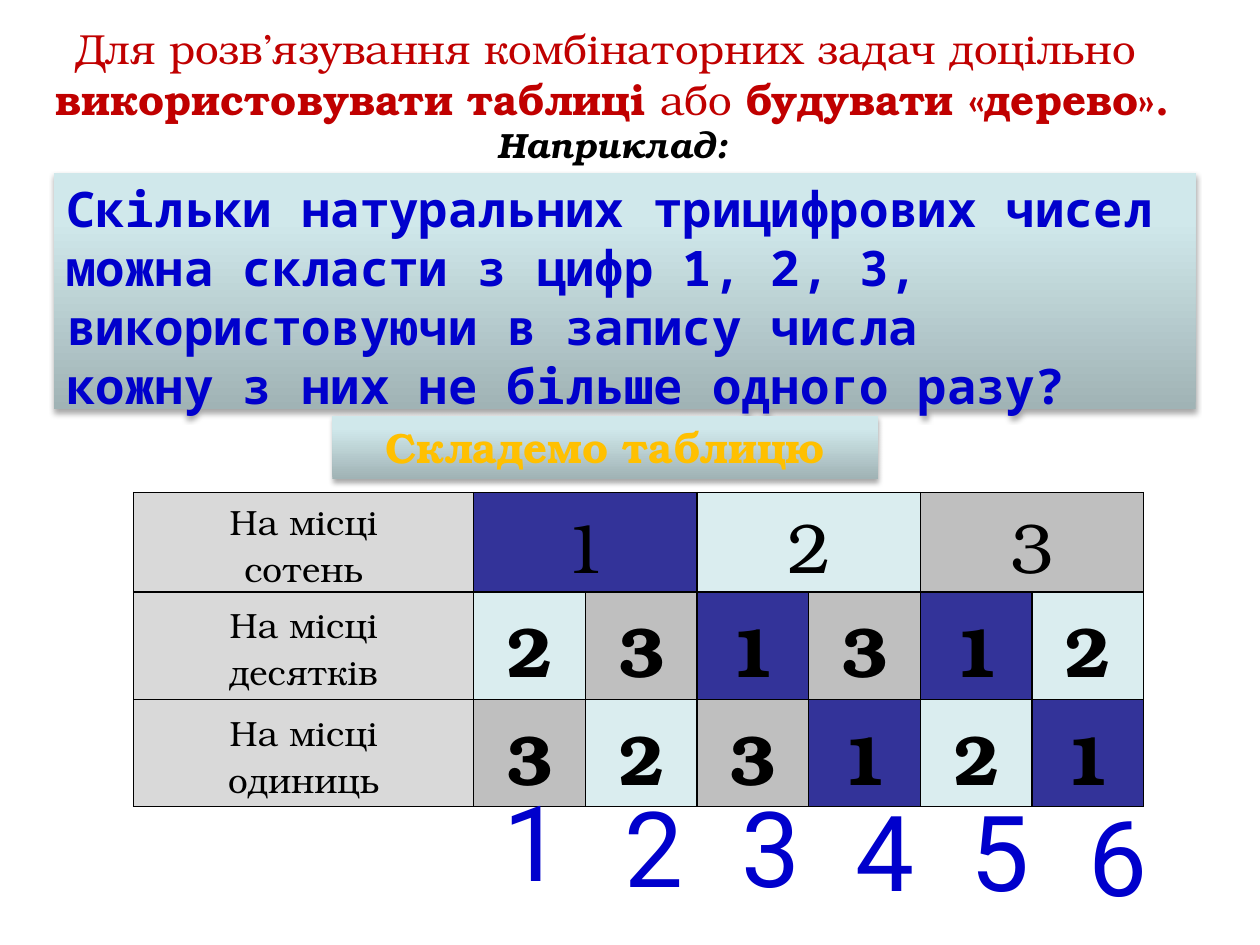
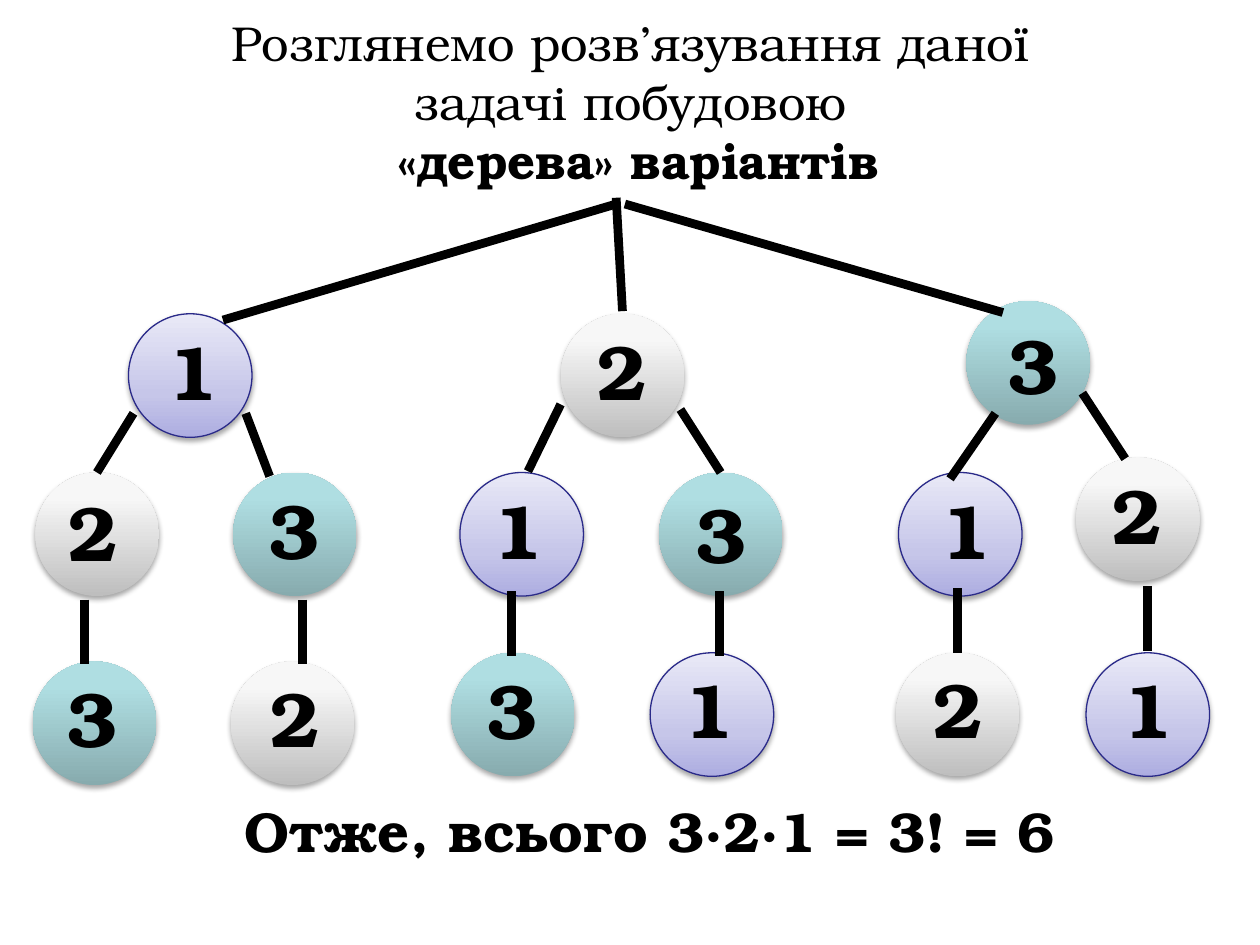
from copy import deepcopy
from pptx import Presentation
from pptx.dml.color import RGBColor
from pptx.enum import shapes as kinds, text as t
from pptx.oxml import ns, parse_xml
from pptx.util import Pt

BLACK = RGBColor(0x00, 0x00, 0x00)
RED = RGBColor(0xC0, 0x00, 0x00)
BLUE = RGBColor(0x00, 0x00, 0xCC)
GOLD = RGBColor(0xFF, 0xC0, 0x00)
NAVY = RGBColor(0x2A, 0x2A, 0x89)
HEAD = RGBColor(0xD9, 0xD9, 0xD9)
CELLS = {
    "1": RGBColor(0x33, 0x33, 0x99),
    "2": RGBColor(0xDA, 0xED, 0xEF),
    "3": RGBColor(0xBF, 0xBF, 0xBF),
}
PANEL = ((0, RGBColor(0xA0, 0xB3, 0xB5)), (0.8, RGBColor(0xD0, 0xE8, 0xEB)),
         (1, RGBColor(0xD1, 0xEA, 0xEC)))
BALLS = {
    "1": ((0, RGBColor(0xAD, 0xAD, 0xE1)), (0.35, RGBColor(0xC6, 0xC6, 0xE9)),
          (1, RGBColor(0xE9, 0xE9, 0xF7))),
    "2": ((0, RGBColor(0xBE, 0xBE, 0xBE)), (0.8, RGBColor(0xF7, 0xF7, 0xF7)),
          (1, RGBColor(0xF8, 0xF8, 0xF8))),
    "3": ((0, RGBColor(0x87, 0xAB, 0xAE)), (0.8, RGBColor(0xAF, 0xDE, 0xE2)),
          (1, RGBColor(0xAF, 0xE0, 0xE4))),
}
SERIF, MONO, SANS = "TeX Gyre Bonum", "Noto Sans Mono", "Roboto"
LEFT, MID = t.PP_ALIGN.LEFT, t.PP_ALIGN.CENTER
RECT, OVAL = kinds.MSO_SHAPE.RECTANGLE, kinds.MSO_SHAPE.OVAL
BALL = 70.6

MARKS = ((280.8, 439.9), (349.9, 443.5), (416.9, 443.5),
         (481.7, 445.7), (547.2, 445.7), (614.9, 448.6))
NODES = (
    ("2", 20.2, 270, 30.2, 273.6), ("3", 18.7, 378, 29.5, 379.4),
    ("3", 133.2, 270, 144.7, 272.2), ("2", 131.8, 378, 145.4, 379.4),
    ("1", 262.8, 270, 272.9, 272.2), ("3", 257.8, 373, 269.3, 375.1),
    ("3", 376.6, 270, 388.8, 274.3), ("1", 371.5, 373, 382.3, 374.4),
    ("1", 513.4, 270, 529.2, 272.2), ("2", 511.9, 373, 524.2, 374.4),
    ("2", 614.9, 261.4, 626.4, 263.5), ("1", 620.6, 373, 632.9, 374.4),
    ("1", 73.4, 179.3, 87.1, 181.4), ("2", 320.4, 179.3, 332.6, 181.4),
    ("3", 552.2, 172.1, 567.4, 177.8),
)
EDGES = (
    (76.3, 236.2, 55.4, 270), (140.4, 236.2, 154.1, 272.2),
    (320.4, 231.1, 301.7, 269.3), (388.8, 234, 411.8, 270),
    (568.8, 236.2, 542.9, 273.6), (618.5, 224.6, 643, 262.1),
    (352.1, 116.6, 127.4, 182.9), (357.1, 116.6, 573.1, 178.6),
    (352.1, 113, 355.7, 177.8),
)
STEMS = ((48.2, 342.7), (172.8, 342.7), (292.3, 337.9),
         (411.1, 337.9), (547.2, 336.2), (655.9, 334.8))


class Deck:
    def __init__(self):
        self.prs = Presentation()
        self.prs.slide_width, self.prs.slide_height = Pt(720), Pt(540)

    def page(self):
        self.slide = self.prs.slides.add_slide(self.prs.slide_layouts[5])

    def put(self, frame, words, size, color=BLACK, font=SERIF, bold=False, align=MID):
        frame.word_wrap = True
        for n, line in enumerate(words.split("\n")):
            para = frame.add_paragraph() if n else frame.paragraphs[0]
            para.alignment = align
            for i, part in enumerate(line.split("*")):
                for j, bit in enumerate(part.split("\v")):
                    if j:
                        para.add_line_break()
                    if bit:
                        run = para.add_run()
                        run.text = bit
                        run.font.name, run.font.size = font, Pt(size)
                        run.font.bold = bold or i % 2 == 1
                        run.font.color.rgb = color

    def title(self, box, words, size, color=BLACK):
        head = self.slide.shapes.title
        head.left, head.top, head.width, head.height = map(Pt, box)
        frame = head.text_frame
        frame.auto_size = t.MSO_AUTO_SIZE.NONE
        frame.vertical_anchor = t.MSO_ANCHOR.TOP
        self.put(frame, words, size, color)
        return frame

    def label(self, box, words, size, **look):
        item = self.slide.shapes.add_textbox(*map(Pt, box))
        self.put(item.text_frame, words, size, **look)

    def shape(self, kind, box, stops, edge=None):
        item = self.slide.shapes.add_shape(kind, *map(Pt, box))
        item.fill.gradient()
        item.fill.gradient_angle = 90
        group = item.element.spPr.find(".//" + ns.qn("a:gsLst"))
        group.append(deepcopy(group[0]))
        for stop, (spot, color) in zip(item.fill.gradient_stops, stops):
            stop.position, stop.color.rgb = spot, color
        if edge:
            item.line.color.rgb, item.line.width = edge, Pt(0.75)
        else:
            item.line.fill.background()
        item.shadow.inherit = False
        item.element.spPr.find(ns.qn("a:effectLst")).append(parse_xml(
            f'<a:outerShdw {ns.nsdecls("a")} blurRad="{Pt(3.1)}" dist="{Pt(1.8)}" dir="5400000" '
            'rotWithShape="0"><a:srgbClr val="000000"><a:alpha val="35000"/></a:srgbClr>'
            '</a:outerShdw>'))
        item.text_frame.vertical_anchor = t.MSO_ANCHOR.TOP
        return item.text_frame

    def line(self, *ends):
        item = self.slide.shapes.add_connector(kinds.MSO_CONNECTOR.STRAIGHT, *map(Pt, ends))
        item.line.color.rgb, item.line.width = BLACK, Pt(5)
        item.element.spPr.append(parse_xml(f'<a:effectLst {ns.nsdecls("a")}/>'))

    def cell(self, cell, color):
        cell.fill.solid()
        cell.fill.fore_color.rgb = color
        cell.vertical_anchor = t.MSO_ANCHOR.MIDDLE
        cell.margin_top, cell.margin_bottom = Pt(3), 0
        for n, side in enumerate("LRTB"):
            cell._tc.get_or_add_tcPr().insert(n, parse_xml(
                f'<a:ln{side} {ns.nsdecls("a")} w="{Pt(1)}"><a:solidFill>'
                f'<a:srgbClr val="{BLACK}"/></a:solidFill></a:ln{side}>'))

    def table(self, box, wide, rows):
        grid = self.slide.shapes.add_table(len(rows), 7, *map(Pt, box)).table
        grid.first_row = grid.horz_banding = False
        for n, col in enumerate(grid.columns):
            col.width = Pt((box[2] - wide) / 6 if n else wide)
        for r, (name, digits) in enumerate(rows):
            self.cell(grid.cell(r, 0), HEAD)
            self.put(grid.cell(r, 0).text_frame, "На місці\n" + name, 20)
            span = 6 // len(digits)
            for c in range(6):
                self.cell(grid.cell(r, c + 1), CELLS[digits[c // span]])
            for n, digit in enumerate(digits):
                first = grid.cell(r, 1 + n * span)
                if span > 1:
                    first.merge(grid.cell(r, (n + 1) * span))
                self.put(first.text_frame, digit, 40, bold=r > 0)


def chart(deck):
    deck.page()
    head = deck.title((0, 9.4, 700, 90),
                      "Для розв’язування комбінаторних задач доцільно \n"
                      "*використовувати таблиці *або *будувати «дерево».*\n*Наприклад:*", 24, RED)
    font = head.paragraphs[2].runs[0].font
    font.size, font.italic, font.color.rgb = Pt(20), True, BLACK
    task = deck.shape(RECT, (31, 98.6, 652.3, 135.4), PANEL)
    deck.put(task, "Скільки натуральних трицифрових чисел \vможна скласти з цифр 1, 2, 3, \v"
             "використовуючи в запису числа \vкожну з них не більше одного разу?",
             28, BLUE, MONO, True, LEFT)
    deck.table((76.3, 281.5, 577.4, 170), 194.4,
               (("сотень", "123"), ("десятків", "231312"), ("одиниць", "323121")))
    band = deck.shape(RECT, (190, 237.6, 311.8, 36), PANEL)
    deck.put(band, "Складемо таблицю", 24, GOLD, bold=True)
    for n, (x, y) in enumerate(MARKS, 1):
        deck.label((x, y, 39.6, 80), str(n), 60, color=BLUE, font=SANS, align=LEFT)


def tree(deck):
    deck.page()
    deck.title((105, 3.6, 510.5, 108.7),
               "Розглянемо розв’язування даної задачі побудовою\n *«дерева» варіантів*", 28)
    for digit, x, y, *_ in NODES:
        deck.shape(OVAL, (x, y, BALL, BALL), BALLS[digit], NAVY if digit == "1" else None)
    for edge in EDGES:
        deck.line(*edge)
    for x, y in STEMS:
        deck.line(x, y, x, y + 37)
    for digit, *_, x, y in NODES:
        deck.label((x, y, 46, 60.5), digit, 44, bold=True)
    deck.label((31, 451.4, 680.4, 46), "Отже, всього 3∙2∙1 = 3! = 6", 32, bold=True)


def main():
    deck = Deck()
    chart(deck)
    tree(deck)
    deck.prs.save("out.pptx")


if __name__ == "__main__":
    main()
